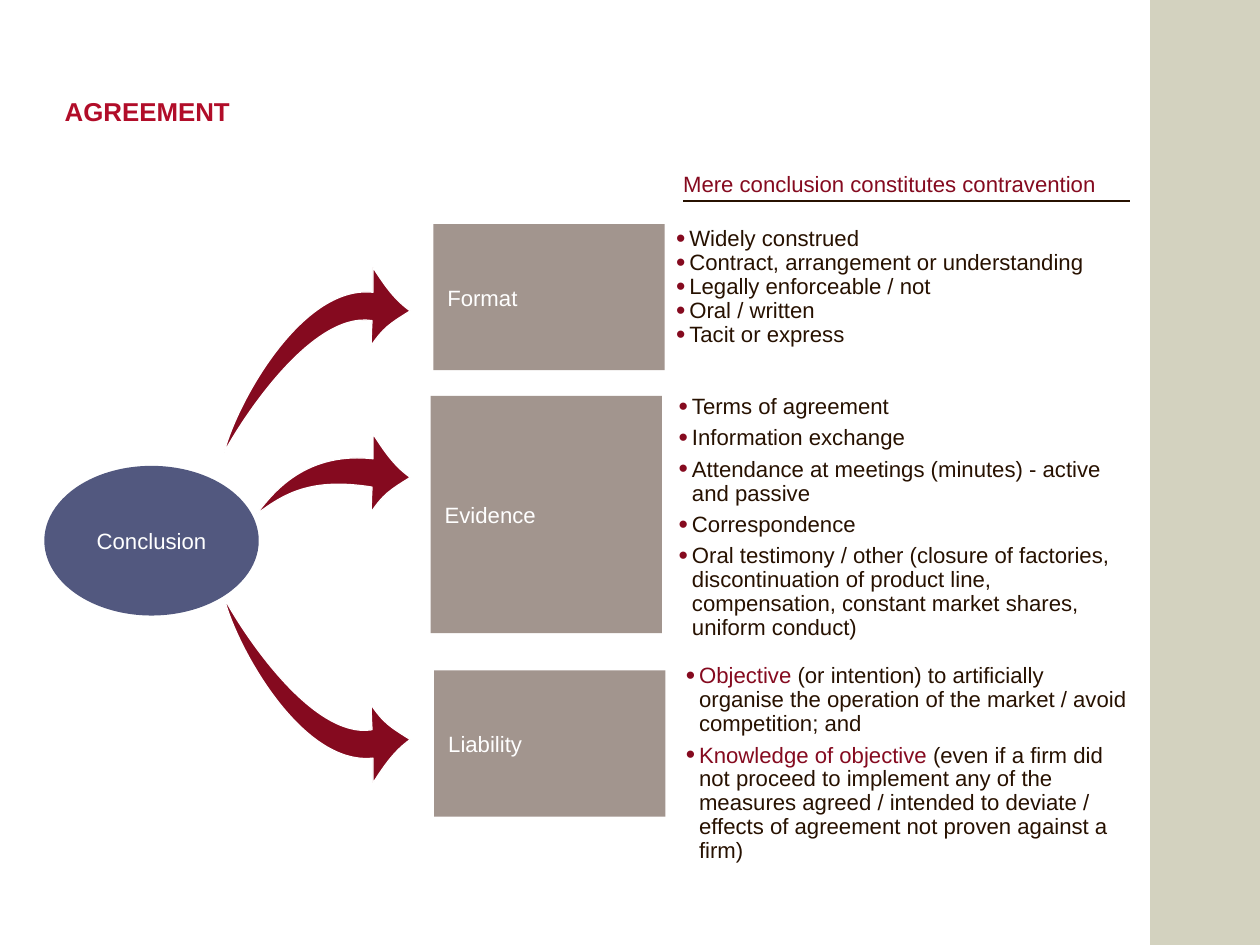
from dataclasses import dataclass

from lxml.etree import SubElement
from pptx import Presentation
from pptx.dml.color import RGBColor
from pptx.enum.shapes import MSO_CONNECTOR, MSO_SHAPE
from pptx.enum.text import MSO_ANCHOR, MSO_AUTO_SIZE, PP_ALIGN
from pptx.oxml.ns import qn
from pptx.util import Pt

PX = 9144  # EMU in one px, a hundredth of an inch
Point = tuple[int, int]


@dataclass(frozen=True)
class Theme:
    font: str = "Arial"
    title: str = "B10D29"
    accent: str = "850A1F"
    ink: str = "271100"
    white: str = "FFFFFF"
    band: str = "D3D2BF"
    oval: str = "52587F"
    block: str = "A2958E"
    title_size: int = 21
    body_size: int = 18


@dataclass(frozen=True)
class Area:
    left: int
    top: int
    width: int
    height: int

    def emu(self) -> tuple[int, int, int, int]:
        return self.left * PX, self.top * PX, self.width * PX, self.height * PX


@dataclass(frozen=True)
class Bullet:
    text: str
    lead: str = ""


@dataclass(frozen=True)
class Topic:
    name: str
    block: Area
    notes: Area
    bullets: tuple[Bullet, ...]
    gap: int = 0


@dataclass(frozen=True)
class Arrow:
    """Tail points are offsets from the tip; flip -1 turns the arrow upside down."""
    tip: Point
    inner: Point
    tail: Point
    outer: Point
    flip: int = 1


THEME = Theme()

TOPICS = (
    Topic("Format", Area(489, 253, 261, 165), Area(763, 254, 504, 138), (
        Bullet("Widely construed"),
        Bullet("Contract, arrangement or understanding"),
        Bullet("Legally enforceable / not"),
        Bullet("Oral / written"),
        Bullet("Tacit or express"),
    )),
    Topic("Evidence", Area(486, 447, 261, 268), Area(766, 444, 504, 279), (
        Bullet("Terms of agreement"),
        Bullet("Information exchange"),
        Bullet("Attendance at meetings (minutes) - active and passive"),
        Bullet("Correspondence"),
        Bullet("Oral testimony / other (closure of factories, discontinuation of product line, "
               "compensation, constant market shares, uniform conduct)"),
    ), gap=6),
    Topic("Liability", Area(490, 757, 261, 165), Area(774, 748, 504, 227), (
        Bullet("(or intention) to artificially organise the operation of the market / avoid "
               "competition; and", lead="Objective "),
        Bullet("(even if a firm did not proceed to implement any of the measures agreed / intended "
               "to deviate / effects of agreement not proven against a firm)",
               lead="Knowledge of objective "),
    ), gap=6),
)

LONG_TAIL = {"inner": (-192, 126), "tail": (-210, 160), "outer": (-198, 109)}
ARROWS = (
    Arrow((463, 351), **LONG_TAIL),
    Arrow((463, 835), **LONG_TAIL, flip=-1),
    Arrow((463, 539), inner=(-142, 18), tail=(-174, 42), outer=(-160, 25)),
)


def rgb(color: str) -> RGBColor:
    return RGBColor.from_string(color)


def write(para, text: str, *, color: str, size: int = THEME.body_size, bold: bool = False) -> None:
    span = para.add_run()
    span.text = text
    span.font.name = THEME.font
    span.font.size = Pt(size)
    span.font.bold = bold
    span.font.color.rgb = rgb(color)


def paint(shape, fill: str) -> None:
    shape.shadow.inherit = False
    shape.fill.solid()
    shape.fill.fore_color.rgb = rgb(fill)
    shape.line.fill.background()


def add_filled(page, kind: MSO_SHAPE, area: Area, fill: str):
    shape = page.shapes.add_shape(kind, *area.emu())
    paint(shape, fill)
    return shape


def add_label(shape, text: str, align: PP_ALIGN, indent: int = 0) -> None:
    shape.text_frame.vertical_anchor = MSO_ANCHOR.MIDDLE
    para = shape.text_frame.paragraphs[0]
    para.alignment = align
    if indent:
        para._p.get_or_add_pPr().set("marL", str(indent * PX))
    write(para, text, color=THEME.white)


def clear_margins(frame) -> None:
    frame.margin_left = frame.margin_top = frame.margin_right = frame.margin_bottom = 0


def add_text_box(page, area: Area):
    """Add a wrapping box without margins that sits on its bottom edge."""
    frame = page.shapes.add_textbox(*area.emu()).text_frame
    clear_margins(frame)
    frame.word_wrap = True
    frame.auto_size = MSO_AUTO_SIZE.SHAPE_TO_FIT_TEXT
    frame.vertical_anchor = MSO_ANCHOR.BOTTOM
    return frame


def set_bullet(para) -> None:
    properties = para._p.get_or_add_pPr()
    properties.set("marL", str(15 * PX))
    properties.set("indent", str(-15 * PX))
    color = SubElement(properties, qn("a:buClr"))
    SubElement(color, qn("a:srgbClr"), val=THEME.accent)
    SubElement(properties, qn("a:buSzPct"), val="120000")
    SubElement(properties, qn("a:buFont"), typeface=THEME.font)
    SubElement(properties, qn("a:buChar"), char="•")


def add_topic(page, topic: Topic) -> None:
    block = add_filled(page, MSO_SHAPE.RECTANGLE, topic.block, THEME.block)
    add_label(block, topic.name, PP_ALIGN.LEFT, indent=6)
    frame = add_text_box(page, topic.notes)
    for index, bullet in enumerate(topic.bullets):
        para = frame.add_paragraph() if index else frame.paragraphs[0]
        set_bullet(para)
        para.line_spacing = 0.9
        if bullet is not topic.bullets[-1]:
            para.space_after = Pt(topic.gap)
        if bullet.lead:
            write(para, bullet.lead, color=THEME.accent)
        write(para, bullet.text, color=THEME.ink)


def add_arrow(page, arrow: Arrow) -> None:
    curves = (  # two control points and an end point each, from the tip round to the tip
        ((-24, 15), (-30, 19), (-44, 39)),
        ((-44, 39), (-44, 25), (-43, 11)),
        ((-112, 0), arrow.inner, arrow.tail),
        (arrow.outer, (-124, -30), (-42, -21)),
        ((-42, -34), (-42, -49), (-42, -49)),
        ((-32, -34), (-20, -14), (0, 0)),
    )

    def place(offset: Point) -> Point:
        return (arrow.tip[0] + offset[0]) * PX, (arrow.tip[1] + arrow.flip * offset[1]) * PX

    builder = page.shapes.build_freeform(*place((0, 0)))
    builder.add_line_segments([place(end) for _, _, end in curves])
    shape = builder.convert_to_shape()
    segments = list(shape._element.iter(qn("a:lnTo")))
    for segment, curve in zip(segments, curves):
        bend = segment.makeelement(qn("a:cubicBezTo"))
        for x, y in map(place, curve):
            SubElement(bend, qn("a:pt"), x=str(x - shape.left), y=str(y - shape.top))
        segment.getparent().replace(segment, bend)
    paint(shape, THEME.accent)
    shape.line.color.rgb = rgb(THEME.white)
    shape.line.width = Pt(1)


def add_heading(page) -> None:
    para = add_text_box(page, Area(771, 195, 504, 28)).paragraphs[0]
    para.line_spacing = 0.9
    write(para, "Mere conclusion constitutes contravention", color=THEME.accent)
    rule = page.shapes.add_connector(
        MSO_CONNECTOR.STRAIGHT, 771 * PX, 227 * PX, 1275 * PX, 227 * PX)
    rule.line.color.rgb = rgb(THEME.ink)
    rule.line.width = Pt(1)
    SubElement(rule._element.spPr, qn("a:effectLst"))


def add_title(page) -> None:
    title = page.shapes.title
    title.left, title.top, title.width, title.height = Area(73, 108, 1181, 122).emu()
    clear_margins(title.text_frame)
    title.text_frame.vertical_anchor = MSO_ANCHOR.TOP
    para = title.text_frame.paragraphs[0]
    para.alignment = PP_ALIGN.LEFT
    para.line_spacing = Pt(25.2)
    write(para, "AGREEMENT", color=THEME.title, size=THEME.title_size, bold=True)


def main() -> None:
    deck = Presentation()
    deck.slide_width, deck.slide_height = 1422 * PX, 1067 * PX
    page = deck.slides.add_slide(deck.slide_layouts[5])
    add_filled(page, MSO_SHAPE.RECTANGLE, Area(1298, 0, 124, 1067), THEME.band)
    add_title(page)
    oval = add_filled(page, MSO_SHAPE.OVAL, Area(50, 526, 242, 169), THEME.oval)
    add_label(oval, "Conclusion", PP_ALIGN.CENTER)
    for arrow in ARROWS:
        add_arrow(page, arrow)
    add_heading(page)
    for topic in TOPICS:
        add_topic(page, topic)
    deck.save("out.pptx")


if __name__ == "__main__":
    main()
